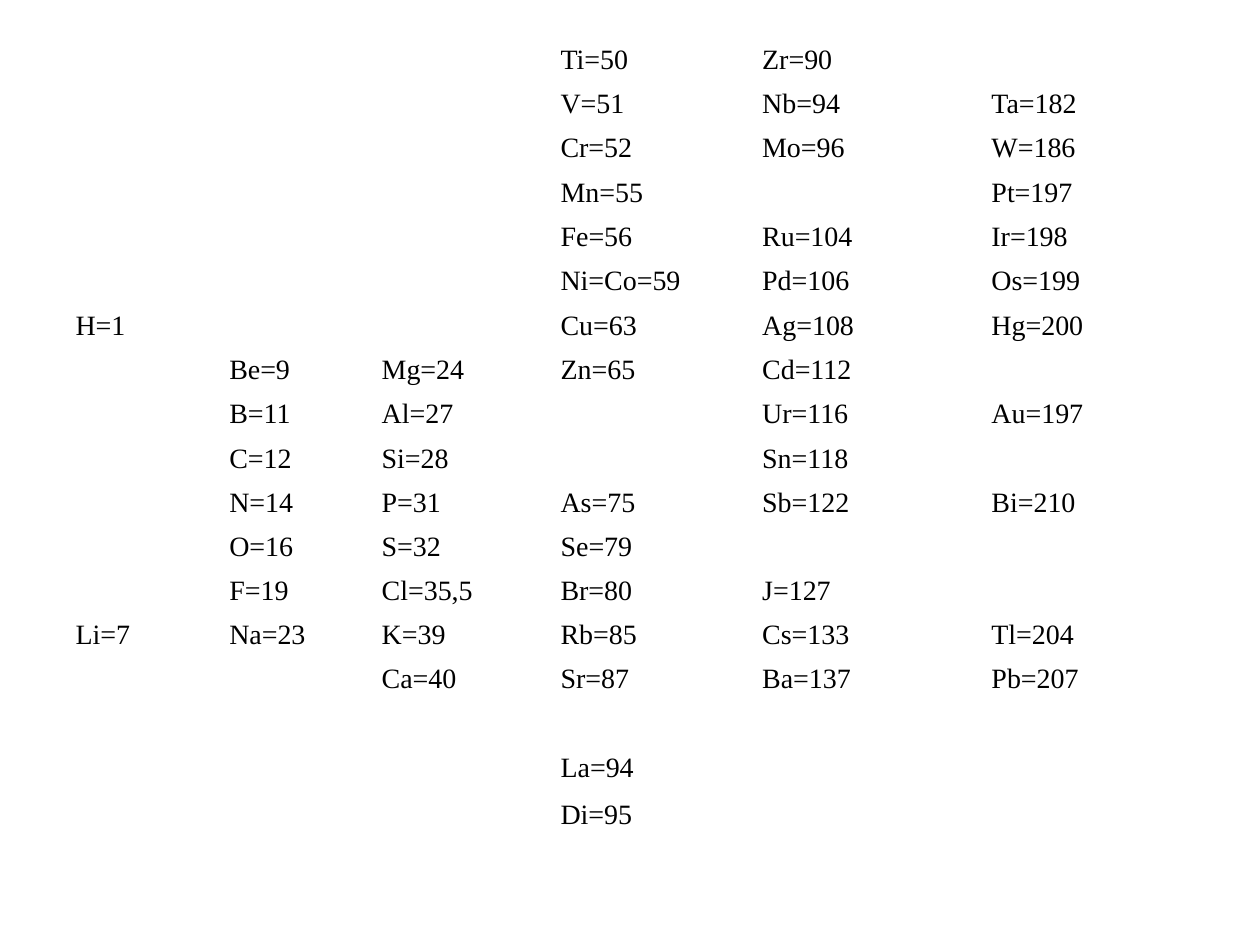
from dataclasses import dataclass

from pptx import Presentation
from pptx.dml.color import RGBColor
from pptx.enum.text import MSO_ANCHOR
from pptx.util import Inches, Pt


@dataclass(frozen=True)
class Theme:
    font: str = "Times New Roman"
    size: int = 16
    ink: str = "000000"


THEME = Theme()

# Table geometry in inches; ordinary rows are set in points
LEFT, TOP = 0.5, 0.3
COLUMN_WIDTHS = (1.22, 1.21, 1.42, 1.6, 1.82, 1.73)
ROW_HEIGHT = Pt(25)
DIDYMIUM_ROW_HEIGHT = Inches(0.39)
LAST_ROW_HEIGHT = Inches(0.7)

# Elements and atomic weights, one table row per line
ELEMENTS = """
|||Ti=50|Zr=90|
|||V=51|Nb=94|Ta=182
|||Cr=52|Mo=96|W=186
|||Mn=55||Pt=197
|||Fe=56|Ru=104|Ir=198
|||Ni=Co=59|Pd=106|Os=199
H=1|||Cu=63|Ag=108|Hg=200
|Be=9|Mg=24|Zn=65|Cd=112|
|B=11|Al=27||Ur=116|Au=197
|C=12|Si=28||Sn=118|
|N=14|P=31|As=75|Sb=122|Bi=210
|O=16|S=32|Se=79||
|F=19|Cl=35,5|Br=80|J=127|
Li=7|Na=23|K=39|Rb=85|Cs=133|Tl=204
||Ca=40|Sr=87|Ba=137|Pb=207
|||||
|||La=94||
|||Di=95||
|||||
"""


def write_text(cell, text, *, size=THEME.size, font=THEME.font, color=THEME.ink):
    p = cell.text_frame.paragraphs[0]
    if not text:
        # Keeps an empty cell from stretching its row
        p._p.get_or_add_endParaRPr().set("sz", str(size * 100))
        return
    r = p.add_run()
    r.text = text
    r.font.name = font
    r.font.size = Pt(size)
    r.font.color.rgb = RGBColor.from_string(color)


def format_cell(cell):
    cell.fill.background()
    cell.vertical_anchor = MSO_ANCHOR.MIDDLE
    cell.margin_left = cell.margin_right = Inches(0.1)
    cell.margin_top = cell.margin_bottom = Inches(0.04)


def add_element_table(s, rows):
    heights = [ROW_HEIGHT] * (len(rows) - 2) + [DIDYMIUM_ROW_HEIGHT, LAST_ROW_HEIGHT]
    table = s.shapes.add_table(
        len(rows), len(COLUMN_WIDTHS), Inches(LEFT), Inches(TOP),
        Inches(sum(COLUMN_WIDTHS)), sum(heights)).table
    table.first_row = table.horz_banding = False

    for column, width in zip(table.columns, COLUMN_WIDTHS):
        column.width = Inches(width)
    for row, height, values in zip(table.rows, heights, rows):
        row.height = height
        for cell, value in zip(row.cells, values):
            format_cell(cell)
            write_text(cell, value)


def main():
    prs = Presentation()
    prs.slide_width, prs.slide_height = Inches(10), Inches(7.5)
    s = prs.slides.add_slide(prs.slide_layouts[6])
    add_element_table(s, [line.split("|") for line in ELEMENTS.split()])
    prs.save("out.pptx")


if __name__ == "__main__":
    main()
